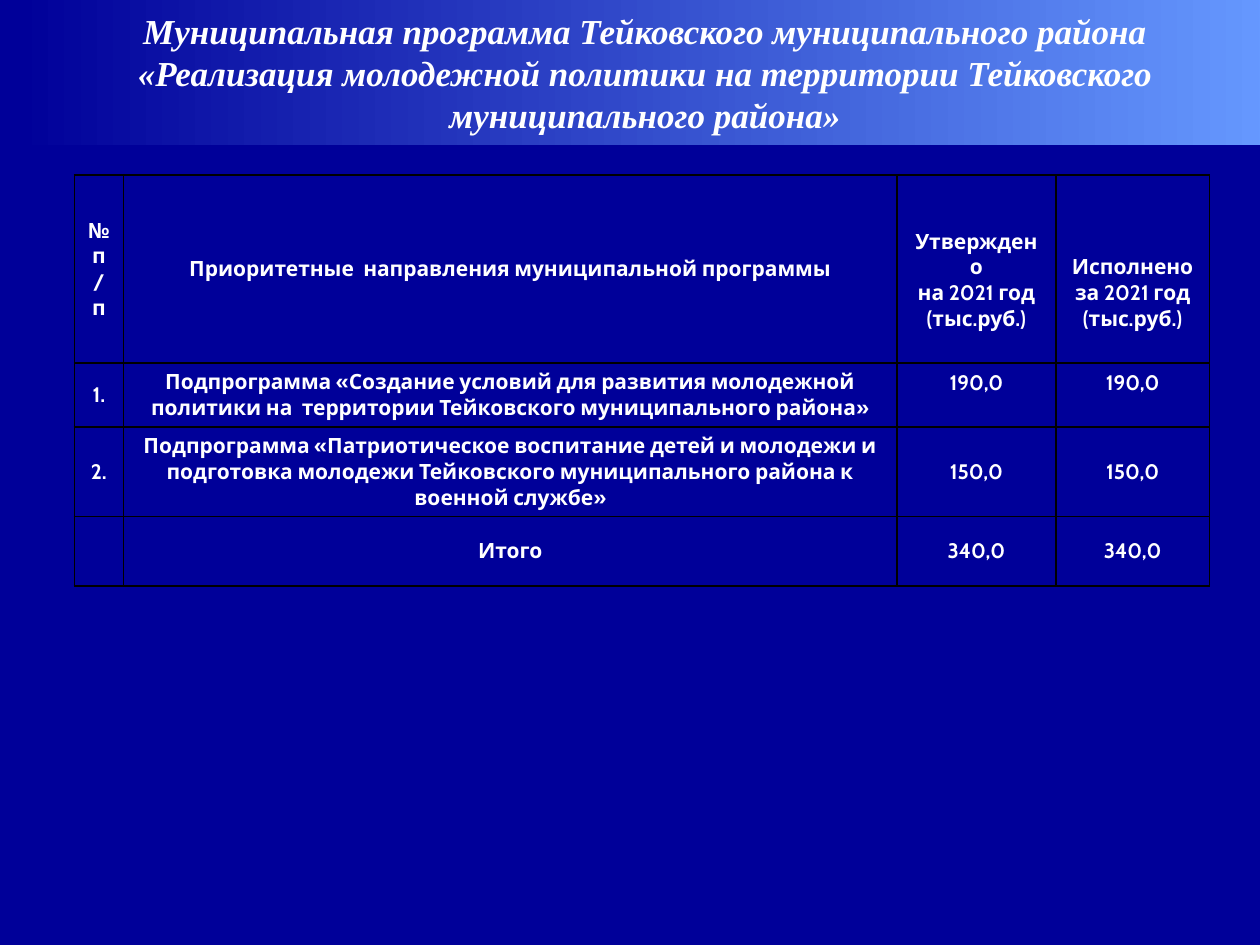
from dataclasses import dataclass

from lxml import etree
from pptx import Presentation
from pptx.dml.color import RGBColor
from pptx.enum.text import MSO_ANCHOR, MSO_AUTO_SIZE, PP_ALIGN
from pptx.oxml.ns import qn
from pptx.util import Inches, Pt

CENTER = PP_ALIGN.CENTER
MIDDLE = MSO_ANCHOR.MIDDLE
BOTTOM = MSO_ANCHOR.BOTTOM
NO_AUTOFIT = MSO_AUTO_SIZE.NONE


@dataclass(frozen=True)
class Theme:
    navy: str = "000099"
    sky: str = "6699FF"
    white: str = "FFFFFF"
    border: str = "000000"
    title_font: str = "Times New Roman"
    table_font: str = "Cabin"
    title_size: int = 20
    table_size: int = 12


theme = Theme()


def write(frame, text, *, font, size, italic=False):
    for index, line in enumerate(text.split("\n")):
        paragraph = frame.paragraphs[0] if index == 0 else frame.add_paragraph()
        paragraph.alignment = CENTER
        run = paragraph.add_run()
        run.text = line
        run.font.name = font
        run.font.size = Pt(size)
        run.font.bold = True
        run.font.italic = italic
        run.font.color.rgb = RGBColor.from_string(theme.white)


def outline(cell):
    properties = cell._tc.get_or_add_tcPr()
    for index, side in enumerate(("a:lnL", "a:lnR", "a:lnT", "a:lnB")):
        line = etree.Element(qn(side), w=str(Pt(1)))
        fill = etree.SubElement(line, qn("a:solidFill"))
        etree.SubElement(fill, qn("a:srgbClr"), val=theme.border)
        properties.insert(index, line)


presentation = Presentation()
presentation.slide_width = Inches(10)
presentation.slide_height = Inches(7.5)
slide = presentation.slides.add_slide(presentation.slide_layouts[5])
slide.background.fill.solid()
slide.background.fill.fore_color.rgb = RGBColor.from_string(theme.navy)

heading = slide.shapes.title
heading.left, heading.top = Inches(0.12), Inches(0)
heading.width, heading.height = Inches(10), Inches(1.15)
heading.fill.gradient()
heading.fill.gradient_angle = 0
for stop, colour in zip(heading.fill.gradient_stops, (theme.navy, theme.sky)):
    stop.color.rgb = RGBColor.from_string(colour)
heading.text_frame.word_wrap = True
heading.text_frame.auto_size = NO_AUTOFIT
heading.text_frame.vertical_anchor = MIDDLE
write(
    heading.text_frame,
    "Муниципальная программа Тейковского муниципального района\n"
    "«Реализация молодежной политики на территории Тейковского муниципального района»",
    font=theme.title_font, size=theme.title_size, italic=True,
)

budget_rows = [
    ("№\nп/п", "Приоритетные  направления муниципальной программы",
     "Утверждено\nна 2021 год\n(тыс.руб.)", "Исполнено\nза 2021 год\n(тыс.руб.)"),
    ("1.", "Подпрограмма «Создание условий для развития молодежной политики на  "
     "территории Тейковского муниципального района»", "190,0", "190,0"),
    ("2.", "Подпрограмма «Патриотическое воспитание детей и молодежи и подготовка "
     "молодежи Тейковского муниципального района к военной службе»", "150,0", "150,0"),
    ("", "Итого", "340,0", "340,0"),
]
column_widths = (0.39, 6.14, 1.26, 1.22)
row_heights = (1.49, 0.51, 0.71, 0.55)

budget = slide.shapes.add_table(
    len(row_heights), len(column_widths), Inches(0.59), Inches(1.39),
    Inches(sum(column_widths)), Inches(sum(row_heights)),
).table
budget.first_row = False
budget.horz_banding = False
for column, width in zip(budget.columns, column_widths):
    column.width = Inches(width)
for row, height in zip(budget.rows, row_heights):
    row.height = Inches(height)

total_row = len(budget_rows) - 1
for row_index, texts in enumerate(budget_rows):
    for column_index, text in enumerate(texts):
        cell = budget.cell(row_index, column_index)
        is_total = row_index == total_row
        is_amount = column_index >= 2 and not is_total
        cell.vertical_anchor = BOTTOM if is_amount else MIDDLE
        cell.margin_left = cell.margin_right = Inches(0.08 if is_total else 0.1)
        cell.margin_top = cell.margin_bottom = Inches(0 if is_total else 0.05)
        if is_amount:
            cell.margin_bottom = Inches(0.25)
        cell.fill.background()
        outline(cell)
        if text:
            write(cell.text_frame, text, font=theme.table_font, size=theme.table_size)

presentation.save("out.pptx")
